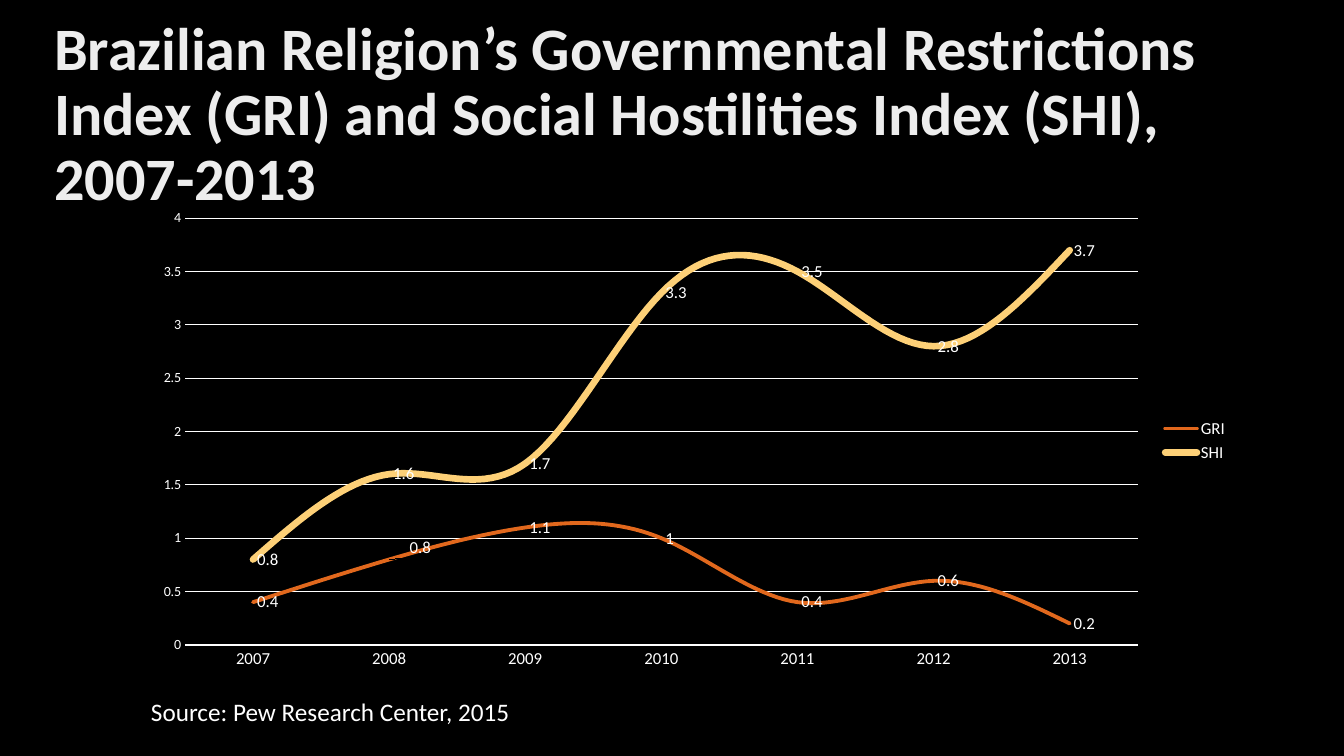
from dataclasses import dataclass

import pptx
import pptx.chart.data
import pptx.dml.color
import pptx.enum.chart
import pptx.enum.text
import pptx.oxml
import pptx.oxml.ns
import pptx.util
from pptx.util import Pt

COLOURS = {"background": "000000", "title": "EDEDED", "text": "FFFFFF",
           "gri": "E1681D", "shi": "FDD077"}
FONT = "Calibri"
YEARS = [str(year) for year in range(2007, 2014)]


@dataclass
class TextBlock:
    text: str
    place: tuple[float, float, float, float]
    colour: str
    anchor: pptx.enum.text.MSO_ANCHOR
    spacing: float
    font: dict


@dataclass
class IndexLine:
    name: str
    values: tuple[float, ...]
    colour: str
    width: float


BLOCKS = [
    TextBlock("Brazilian Religion’s Governmental Restrictions Index (GRI) "
              "and Social Hostilities Index (SHI), 2007-2013",
              (31.7, 66.2, 892.8, 90), "title", pptx.enum.text.MSO_ANCHOR.BOTTOM,
              0.9, {"size": Pt(43), "bold": True}),
    TextBlock("Source: Pew Research Center, 2015",
              (100.8, 493.9, 298.1, 28.8), "text", pptx.enum.text.MSO_ANCHOR.TOP,
              1.0, {"size": Pt(18)}),
]
LINES = [
    IndexLine("GRI", (0.4, 0.8, 1.1, 1, 0.4, 0.6, 0.2), "gri", 2.75),
    IndexLine("SHI", (0.8, 1.6, 1.7, 3.3, 3.5, 2.8, 3.7), "shi", 4.75),
]
CHART_PLACE = (100.8, 144, 784.1, 341.3)


def rgb(name: str) -> pptx.dml.color.RGBColor:
    return pptx.dml.color.RGBColor.from_string(COLOURS[name])


def set_values(target, values: dict) -> None:
    for name, value in values.items():
        setattr(target, name, value)


def style_font(font, colour: str, values: dict) -> None:
    set_values(font, {"name": FONT} | values)
    font.color.rgb = rgb(colour)


def style_line(line, colour: str, width: float) -> None:
    line.color.rgb = rgb(colour)
    line.width = Pt(width)


def manual_layout(**values):
    """Return a c:layout element; values are fractions of the chart."""
    items = "".join(f'<c:{name} val="{value}"/>' for name, value in values.items())
    return pptx.oxml.parse_xml(
        f'<c:layout {pptx.oxml.ns.nsdecls("c")}>'
        f"<c:manualLayout>{items}</c:manualLayout></c:layout>")


def add_text(page, block: TextBlock) -> None:
    box = page.shapes.add_textbox(*map(Pt, block.place))
    frame = box.text_frame
    set_values(frame, {"word_wrap": True, "vertical_anchor": block.anchor})
    para = frame.paragraphs[0]
    para.line_spacing = block.spacing
    span = para.add_run()
    span.text = block.text
    style_font(span.font, block.colour, block.font)


def style_axes(chart) -> None:
    for axis, size in ((chart.category_axis, 12), (chart.value_axis, 10)):
        set_values(axis, {"major_tick_mark": pptx.enum.chart.XL_TICK_MARK.NONE,
                          "minor_tick_mark": pptx.enum.chart.XL_TICK_MARK.NONE})
        style_font(axis.tick_labels.font, "text", {"size": Pt(size)})
    style_line(chart.category_axis.format.line, "text", 1)
    set_values(chart.value_axis, {"minimum_scale": 0, "maximum_scale": 4,
                                  "major_unit": 0.5, "has_major_gridlines": True})
    chart.value_axis.format.line.fill.background()
    style_line(chart.value_axis.major_gridlines.format.line, "text", 0.75)


def style_series(series, line: IndexLine) -> None:
    series.smooth = True
    series.marker.style = pptx.enum.chart.XL_MARKER_STYLE.NONE
    style_line(series.format.line, line.colour, line.width)
    series.format.line._get_or_add_ln().set("cap", "rnd")
    labels = series.data_labels
    set_values(labels, {"show_value": True,
                        "position": pptx.enum.chart.XL_LABEL_POSITION.RIGHT})
    style_font(labels.font, "text", {"size": Pt(12)})


def shift_label(series, index: int, across: float, down: float) -> None:
    label = series.points[index].data_label
    style_font(label.font, "text", {"size": Pt(12)})
    label.position = pptx.enum.chart.XL_LABEL_POSITION.RIGHT
    element = series.data_labels._element.find(pptx.oxml.ns.qn("c:dLbl"))
    element.insert(1, manual_layout(x=across, y=down))


def add_index_chart(page) -> None:
    data = pptx.chart.data.CategoryChartData()
    data.categories = YEARS
    for line in LINES:
        data.add_series(line.name, line.values)
    chart = page.shapes.add_chart(pptx.enum.chart.XL_CHART_TYPE.LINE,
                                  *map(Pt, CHART_PLACE), data).chart
    set_values(chart, {"has_title": False, "has_legend": True})
    style_font(chart.font, "text", {"size": Pt(10)})
    set_values(chart.legend, {"position": pptx.enum.chart.XL_LEGEND_POSITION.RIGHT,
                              "include_in_layout": False})
    style_font(chart.legend.font, "text", {"size": Pt(12)})
    style_axes(chart)
    for series, line in zip(chart.plots[0].series, LINES):
        style_series(series, line)
    shift_label(chart.plots[0].series[0], 1, 0.015, -0.025)

    plot_area = chart._chartSpace.chart.plotArea
    for old in plot_area.findall(pptx.oxml.ns.qn("c:layout")):
        plot_area.remove(old)
    plot_area.insert(0, manual_layout(layoutTarget="inner", xMode="edge", yMode="edge",
                                      x=0.04, y=0.035, w=0.868, h=0.893))


def main() -> None:
    deck = pptx.Presentation()
    set_values(deck, {"slide_width": Pt(960), "slide_height": Pt(540)})
    page = deck.slides.add_slide(deck.slide_layouts[6])
    page.background.fill.solid()
    page.background.fill.fore_color.rgb = rgb("background")
    add_index_chart(page)
    for block in BLOCKS:
        add_text(page, block)
    deck.save("out.pptx")


if __name__ == "__main__":
    main()
